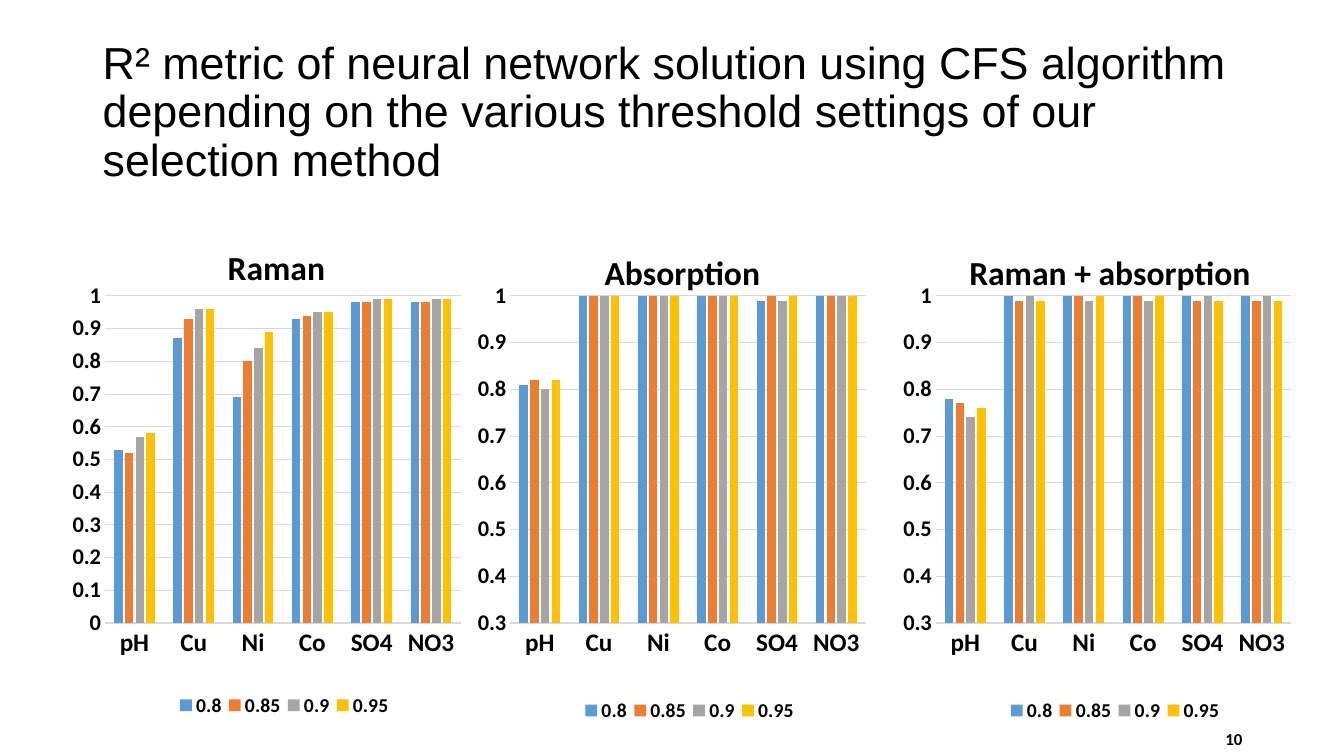
import pptx
import pptx.util
import pptx.chart.data
import pptx.dml.color
import pptx.enum.chart
import pptx.enum.text
import pptx.oxml
import pptx.oxml.ns

Inches, Pt = pptx.util.Inches, pptx.util.Pt
qn = pptx.oxml.ns.qn
ALIGN = pptx.enum.text.PP_ALIGN
TICK = pptx.enum.chart.XL_TICK_MARK

COLORS = {
    "text": "000000", "grid": "D9D9D9",
    "0.8": "5B9BD5", "0.85": "ED7D31", "0.9": "A5A5A5", "0.95": "FFC000",
}
IONS = ["pH", "Cu", "Ni", "Co", "SO4", "NO3"]
WIDTH, HEIGHT = 4.02, 5.26

# title, left, axis minimum, title place, legend top, values by threshold
PANELS = [
    ("Raman", 0.67, 0, (0.38, 0.07), 0.92, {
        "0.8": [0.53, 0.87, 0.69, 0.93, 0.98, 0.98],
        "0.85": [0.52, 0.93, 0.8, 0.94, 0.98, 0.98],
        "0.9": [0.57, 0.96, 0.84, 0.95, 0.99, 0.99],
        "0.95": [0.58, 0.96, 0.89, 0.95, 0.99, 0.99]}),
    ("Absorption", 4.69, 0.3, (0.31, 0.08), 0.93, {
        "0.8": [0.81, 1, 1, 1, 0.99, 1],
        "0.85": [0.82, 1, 1, 1, 1, 1],
        "0.9": [0.8, 1, 1, 1, 0.99, 1],
        "0.95": [0.82, 1, 1, 1, 1, 1]}),
    ("Raman + absorption", 8.91, 0.3, (0.16, 0.08), 0.93, {
        "0.8": [0.78, 1, 1, 1, 1, 1],
        "0.85": [0.77, 0.99, 1, 1, 0.99, 0.99],
        "0.9": [0.74, 1, 0.99, 0.99, 1, 1],
        "0.95": [0.76, 0.99, 1, 1, 0.99, 0.99]}),
]


def color(name):
    return pptx.dml.color.RGBColor.from_string(COLORS[name])


def style(font, size, bold=True, face="Calibri"):
    font.size, font.bold, font.name = Pt(size), bold, face
    font.color.rgb = color("text")


def write(slide, text, box, size, bold=False, face="Calibri",
          align=ALIGN.LEFT, lines=1.0):
    frame = slide.shapes.add_textbox(*map(Inches, box)).text_frame
    frame.word_wrap = True
    frame.vertical_anchor = pptx.enum.text.MSO_ANCHOR.MIDDLE
    para = frame.paragraphs[0]
    para.alignment, para.line_spacing = align, lines
    run = para.add_run()
    run.text = text
    style(run.font, size, bold, face)


def place(part, before, target=None, **place_at):
    """Give a chart part a manual layout, as fractions of the chart."""
    for old in part.findall(qn("c:layout")):
        part.remove(old)
    modes = {"xMode": "edge", "yMode": "edge"}
    if target:
        modes = {"layoutTarget": target, **modes}
    items = "".join(f'<c:{key} val="{val}"/>'
                    for key, val in {**modes, **place_at}.items())
    layout = pptx.oxml.parse_xml(
        f'<c:layout {pptx.oxml.ns.nsdecls("c")}>'
        f'<c:manualLayout>{items}</c:manualLayout></c:layout>')
    part.find(qn(before)).addprevious(layout)


def axes(chart, low):
    cat, val = chart.category_axis, chart.value_axis
    for axis, size in ((cat, 18), (val, 16)):
        axis.major_tick_mark = axis.minor_tick_mark = TICK.NONE
        style(axis.tick_labels.font, size)
    val.minimum_scale, val.maximum_scale, val.major_unit = low, 1, 0.1
    val.format.line.fill.background()
    for line in (cat.format.line, val.major_gridlines.format.line):
        line.color.rgb, line.width = color("grid"), Pt(0.75)


def panel(slide, box, title, low, spot, key_top, values):
    data = pptx.chart.data.CategoryChartData()
    data.categories = IONS
    for name, nums in values.items():
        data.add_series(name, nums)
    kind = pptx.enum.chart.XL_CHART_TYPE.COLUMN_CLUSTERED
    chart = slide.shapes.add_chart(kind, *map(Inches, box), data).chart
    style(chart.font, 10, False)
    axes(chart, low)

    plot = chart.plots[0]
    plot.gap_width, plot.overlap = 219, -27
    plot.vary_by_categories = False
    for bars in plot.series:
        bars.format.fill.solid()
        bars.format.fill.fore_color.rgb = color(bars.name)
    place(plot._element.getparent(), "c:barChart", "inner",
          x=0.092, y=0.178, w=0.878, h=0.617)

    frame = chart.chart_title.text_frame
    frame.text = title
    style(frame.paragraphs[0].runs[0].font, 24)
    place(chart.chart_title._element, "c:overlay", x=spot[0], y=spot[1])

    chart.has_legend = True
    key = chart.legend
    key.position = pptx.enum.chart.XL_LEGEND_POSITION.BOTTOM
    key.include_in_layout = False
    style(key.font, 14)
    place(key._element, "c:overlay", x=0.26, y=key_top, w=0.55, h=0.06)


def main():
    deck = pptx.Presentation()
    deck.slide_width, deck.slide_height = Inches(13.33), Inches(7.5)
    slide = deck.slides.add_slide(deck.slide_layouts[6])
    write(slide, "R² metric of neural network solution using CFS algorithm "
          "depending on the various threshold settings of our selection method",
          (0.92, 0.4, 11.5, 1.45), 32, face="Arial", lines=0.9)
    for title, left, *rest in PANELS:
        panel(slide, (left, 2, WIDTH, HEIGHT), title, *rest)
    write(slide, "10", (9.42, 7.13, 3, 0.4), 12, bold=True, align=ALIGN.RIGHT)
    deck.save("out.pptx")


if __name__ == "__main__":
    main()
